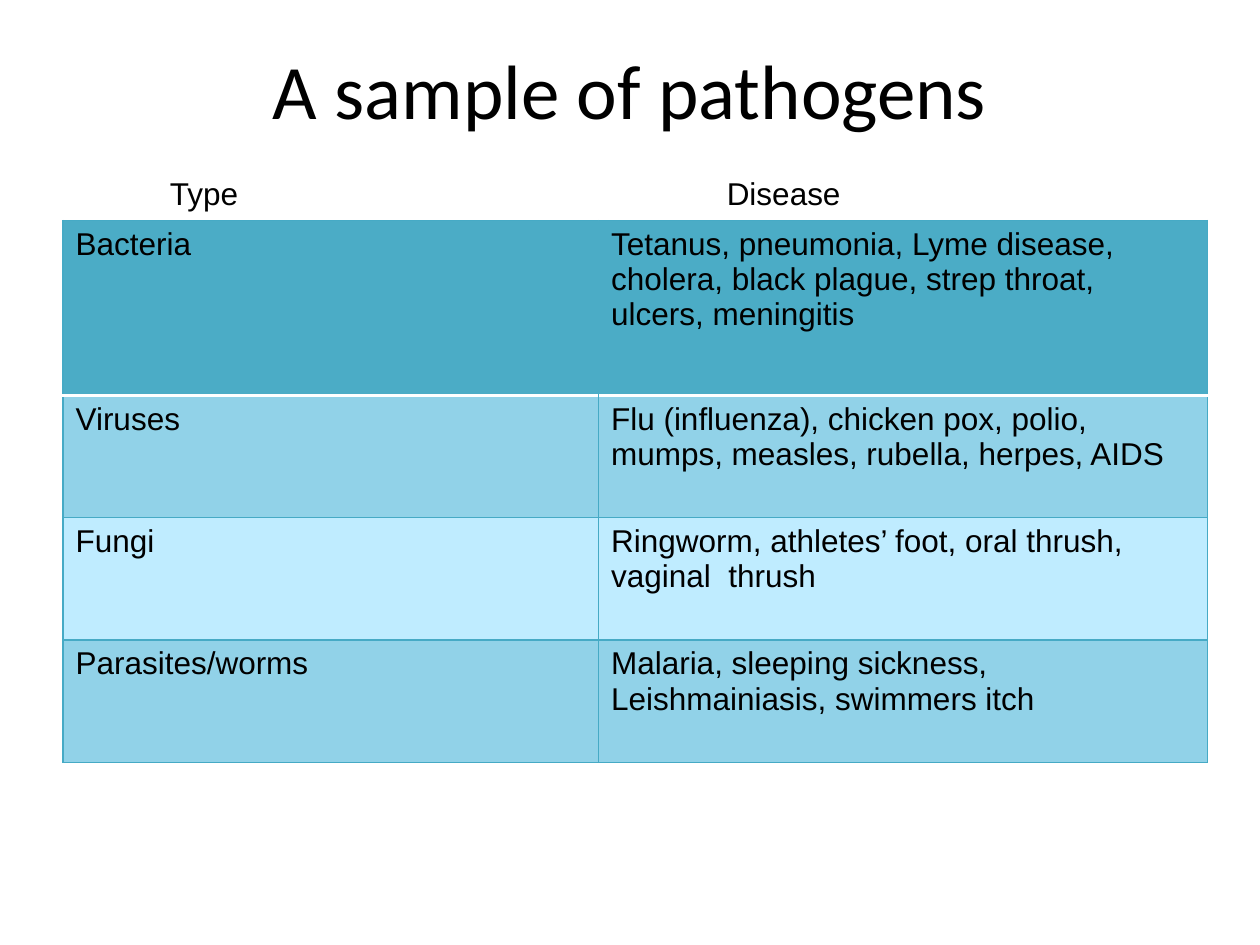
from lxml.etree import SubElement
from pptx import Presentation
from pptx.dml.color import RGBColor
from pptx.enum.text import MSO_ANCHOR as Anchor, PP_ALIGN as Align
from pptx.oxml.ns import qn
from pptx.util import Inches, Pt


def write_text(frame, text, font="Arial", size=18, color="000000"):
    paragraph = frame.paragraphs[0]
    run = paragraph.add_run()
    run.text = text
    formats = {"name": font, "size": Pt(size), "bold": False}
    for name, value in formats.items():
        setattr(run.font, name, value)
    run.font.color.rgb = RGBColor.from_string(color)
    return paragraph


def add_border(cell, side, color, width):
    line = SubElement(cell._tc.get_or_add_tcPr(), qn(f"a:{side}"), w=str(Pt(width)))
    fill = SubElement(line, qn("a:solidFill"))
    SubElement(fill, qn("a:srgbClr"), val=color)


presentation = Presentation()
presentation.slide_width = Inches(10)
presentation.slide_height = Inches(7.5)
slide = presentation.slides.add_slide(presentation.slide_layouts[6])

# Title and column headings
text_boxes = [
    ("A sample of pathogens", (0.5, 0.08, 9, 1.25), "Calibri", 44, Align.CENTER, Anchor.MIDDLE),
    ("Type", (1.25, 1.33, 1.83, 0.4), "Arial", 18, Align.LEFT, Anchor.TOP),
    ("Disease", (5.67, 1.33, 3.33, 0.4), "Arial", 18, Align.LEFT, Anchor.TOP),
]
for text, place, font, size, alignment, anchor in text_boxes:
    frame = slide.shapes.add_textbox(*map(Inches, place)).text_frame
    frame.word_wrap = True
    frame.vertical_anchor = anchor
    write_text(frame, text, font, size).alignment = alignment

# Pathogen table: type, diseases, row fill
pathogens = [
    ("Bacteria", "Tetanus, pneumonia, Lyme disease, cholera, black plague, "
                 "strep throat, ulcers, meningitis", "4BACC6"),
    ("Viruses", "Flu (influenza), chicken pox, polio, mumps, measles, "
                "rubella, herpes, AIDS", "91D2E8"),
    ("Fungi", "Ringworm, athletes’ foot, oral thrush, vaginal  thrush", "BFECFF"),
    ("Parasites/worms", "Malaria, sleeping sickness, Leishmainiasis, swimmers itch", "91D2E8"),
]
column_widths = [4.25, 4.83]
row_heights = [1.39, 0.97, 0.97, 0.97]
table = slide.shapes.add_table(
    len(pathogens), 2, Inches(0.5), Inches(1.75),
    Inches(sum(column_widths)), Inches(sum(row_heights))).table
for column, width in zip(table.columns, column_widths):
    column.width = Inches(width)
for row, height in zip(table.rows, row_heights):
    row.height = Inches(height)

for row_index, (*texts, fill_color) in enumerate(pathogens):
    for column_index, text in enumerate(texts):
        cell = table.cell(row_index, column_index)
        write_text(cell.text_frame, text)

        # Thin teal grid, a white rule under the first row, no line inside it
        borders = {side: ("46AAC5", 0.75) for side in ("lnL", "lnR", "lnT", "lnB")}
        if row_index == 0:
            borders["lnB"] = ("FFFFFF", 2)
            borders["lnL" if column_index else "lnR"] = (fill_color, 0.75)
        elif row_index == 1:
            borders["lnT"] = ("FFFFFF", 2)
        for side, (color, width) in borders.items():
            add_border(cell, side, color, width)

        cell.fill.solid()
        cell.fill.fore_color.rgb = RGBColor.from_string(fill_color)

presentation.save("out.pptx")
